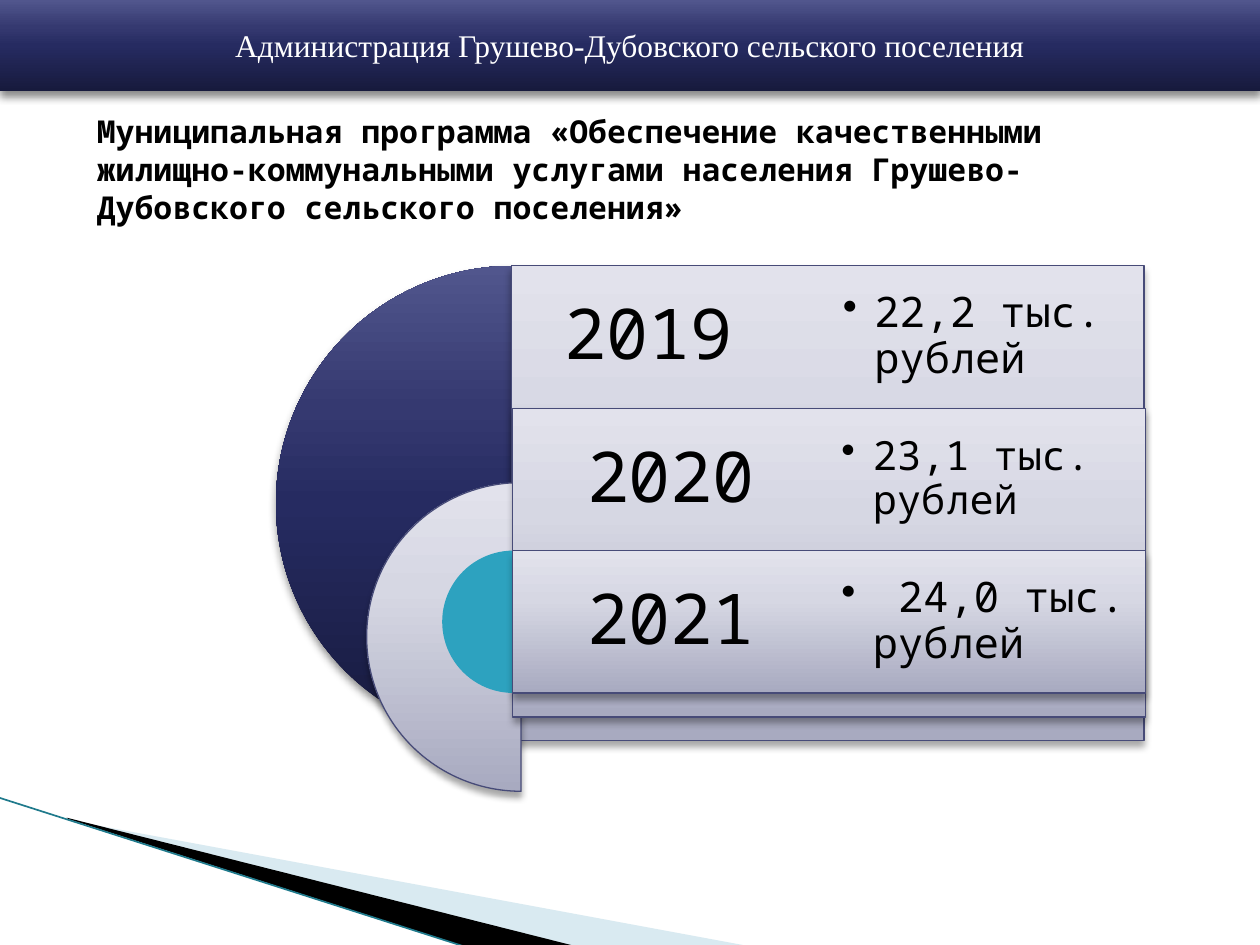
from dataclasses import dataclass

from lxml.etree import SubElement
from pptx import Presentation
from pptx.dml.color import RGBColor
from pptx.enum.shapes import MSO_CONNECTOR, MSO_SHAPE
from pptx.enum.text import MSO_ANCHOR, PP_ALIGN
from pptx.oxml.ns import qn
from pptx.util import Inches, Pt

HUES = {
    "white": "FFFFFF",
    "black": "000000",
    "teal": "2DA2BF",
    "mist": "A0CBDC",
    "edge": "1F7A8C",
    "rim": "474B78",
}
DARK = ((0, "171A3D"), (50, "262B61"), (70, "353970"), (100, "51568D"))
PALE = ((0, "A8AAC0"), (65, "D6D7E3"), (100, "E2E2EC"))
MONO = "Noto Sans Mono"
STEP = 1.13
TOP = 2.11
HALF = 2.51


@dataclass
class Box:
    left: float
    top: float
    width: float
    height: float

    def emu(self) -> tuple:
        return tuple(Inches(v) for v in (self.left, self.top, self.width, self.height))


@dataclass
class Year:
    name: str
    cost: str
    size: float
    inset: float
    left: float
    pie: Box
    ramp: tuple


YEARS = (
    Year("2019 ", "22,2 тыс. рублей", 24, 0.11, 4.06, Box(2.19, 2.11, 3.77, 3.77), DARK),
    Year("2020", "23,1 тыс. рублей", 23, 0.1, 4.07, Box(2.91, 3.83, 2.45, 2.45), PALE),
    Year("2021", " 24,0 тыс. рублей", 24, 0.1, 4.07, Box(3.51, 4.37, 1.13, 1.13), ()),
)


def hue(name: str) -> RGBColor:
    return RGBColor.from_string(HUES[name])


def add(node, tag: str, **attrs):
    return SubElement(node, qn(tag), {k: str(v) for k, v in attrs.items()})


def blend(shape, ramp: tuple) -> None:
    shape.fill.gradient()
    shape.fill.gradient_angle = 90
    stops = shape.element.spPr.find(".//" + qn("a:gsLst"))
    for stop in list(stops):
        stops.remove(stop)
    for pos, tone in ramp:
        add(add(stops, "a:gs", pos=pos * 1000), "a:srgbClr", val=tone)


def shade(shape, alpha: int, blur: float, gap: float) -> None:
    effect = shape.element.spPr.find(qn("a:effectLst"))
    cast = add(effect, "a:outerShdw", blurRad=Pt(blur), dist=Pt(gap), dir=5400000,
               algn="ctr", rotWithShape=0)
    add(add(cast, "a:srgbClr", val=HUES["black"]), "a:alpha", val=alpha * 1000)


def draw(slide, kind: MSO_SHAPE, box: Box, ramp: tuple):
    shape = slide.shapes.add_shape(kind, *box.emu())
    shape.shadow.inherit = False
    shape.line.fill.background()
    if ramp:
        blend(shape, ramp)
    else:
        shape.fill.solid()
        shape.fill.fore_color.rgb = hue("teal")
    if ramp == DARK:
        shade(shape, 45, 5, 3)
    elif ramp == PALE:
        shape.line.color.rgb = hue("rim")
        shape.line.width = Pt(0.75)
        shade(shape, 35, 4, 3)
    return shape


def write(shape, text: str, *, size: float, font: str = MONO, tone: str = "black",
          bold: bool = False, align=PP_ALIGN.LEFT, anchor=MSO_ANCHOR.MIDDLE,
          inset: float = 0, lead: float = 1, dot: bool = False) -> None:
    frame = shape.text_frame
    frame.word_wrap = True
    frame.vertical_anchor = anchor
    if inset:
        frame.margin_left = frame.margin_right = Inches(inset)
        frame.margin_top = frame.margin_bottom = Inches(inset)
    para = frame.paragraphs[0]
    para.alignment = align
    para.line_spacing = lead
    if dot:
        props = para._p.get_or_add_pPr()
        props.set("marL", str(Inches(0.25)))
        props.set("indent", str(Inches(-0.25)))
        add(props, "a:buChar", char="•")
    run = para.add_run()
    run.text = text
    run.font.size = Pt(size)
    run.font.name = font
    run.font.bold = bold
    run.font.color.rgb = hue(tone)


def label(slide, text: str, box: Box, **style) -> None:
    write(slide.shapes.add_textbox(*box.emu()), text, **style)


def wedge(slide, points: tuple, tone: str, alpha: int = 100) -> None:
    spots = [(Inches(x), Inches(y)) for x, y in points]
    path = slide.shapes.build_freeform(*spots[0])
    path.add_line_segments(spots[1:], close=True)
    shape = path.convert_to_shape()
    shape.shadow.inherit = False
    shape.line.fill.background()
    shape.fill.solid()
    shape.fill.fore_color.rgb = hue(tone)
    if alpha < 100:
        color = shape.element.spPr.find(qn("a:solidFill")).find(qn("a:srgbClr"))
        add(color, "a:alpha", val=alpha * 1000)


def decor(slide) -> None:
    wedge(slide, ((0.55, 6.51), (5.95, 7.51), (4.56, 7.51), (0.55, 6.5)), "mist", 40)
    wedge(slide, ((0.53, 6.49), (4.57, 7.51), (3.72, 7.52), (0.54, 6.5)), "black")
    line = slide.shapes.add_connector(
        MSO_CONNECTOR.STRAIGHT, Inches(-0.01), Inches(6.33), Inches(3.71), Inches(7.52))
    line.line.color.rgb = hue("edge")
    line.line.width = Pt(0.95)
    add(line.element.spPr, "a:effectLst")


def chart(slide) -> None:
    for i, year in enumerate(YEARS):
        top = TOP + i * STEP
        pie = draw(slide, MSO_SHAPE.PIE, year.pie, year.ramp)
        pie.adjustments[0] = 54
        pie.adjustments[1] = 162
        draw(slide, MSO_SHAPE.RECTANGLE,
             Box(year.left, top, 2 * HALF, 3.77 - i * 1.32), PALE)
        label(slide, year.name, Box(year.left, top, HALF, STEP), size=40,
              align=PP_ALIGN.CENTER, inset=0.17, lead=0.9)
    for i, year in enumerate(YEARS):
        label(slide, year.cost, Box(6.58, TOP + i * STEP, HALF, STEP), size=year.size,
              inset=year.inset, lead=0.9, dot=True)


def main() -> None:
    deck = Presentation()
    deck.slide_width = Inches(10)
    deck.slide_height = Inches(7.5)
    slide = deck.slides.add_slide(deck.slide_layouts[6])
    decor(slide)
    head = draw(slide, MSO_SHAPE.RECTANGLE, Box(0, 0, 10, 0.72), DARK)
    write(head, "Администрация Грушево-Дубовского сельского поселения", size=18,
          font="Times New Roman", tone="white", align=PP_ALIGN.CENTER)
    label(slide, "Муниципальная программа «Обеспечение качественными "
          "жилищно-коммунальными услугами населения "
          "Грушево-Дубовского сельского поселения»",
          Box(0.67, 0.84, 8.27, 1.01), size=18, bold=True, anchor=MSO_ANCHOR.TOP)
    chart(slide)
    deck.save("out.pptx")


if __name__ == "__main__":
    main()
